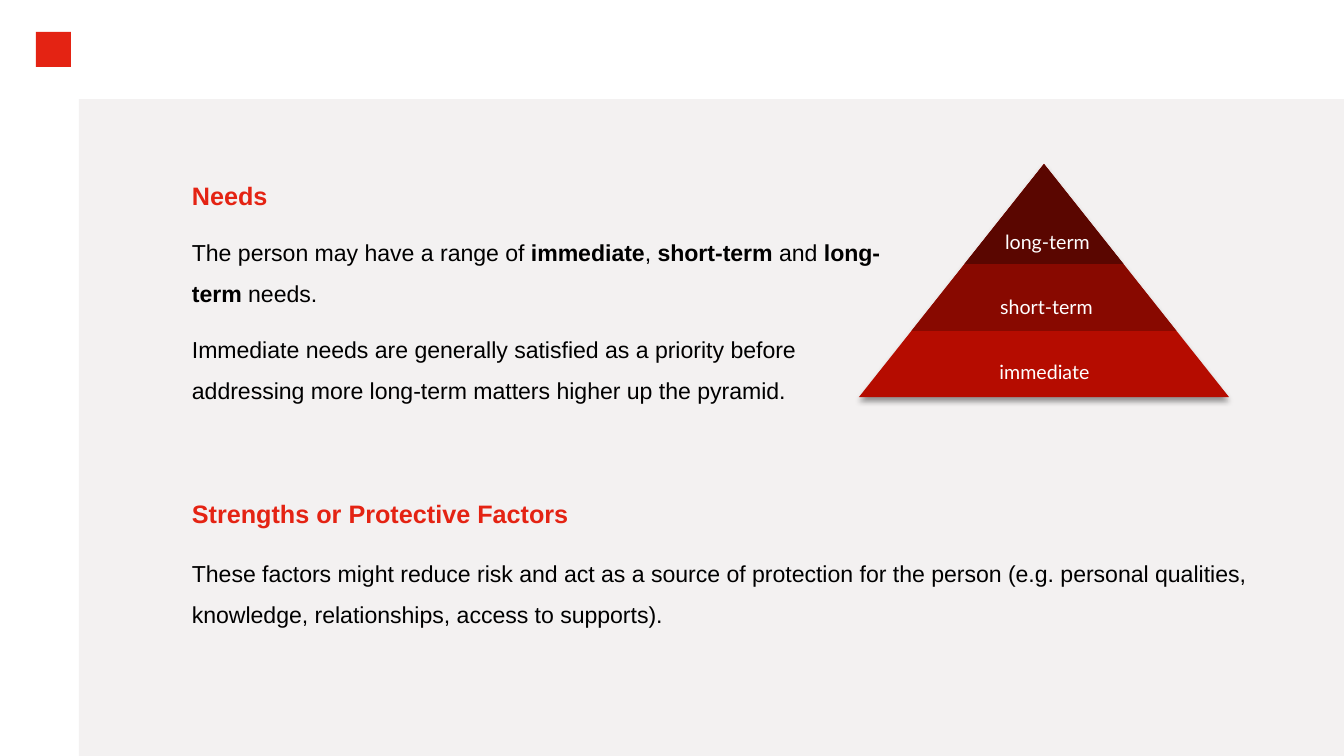
from dataclasses import dataclass

from lxml import etree
from pptx import Presentation
from pptx import util as u
from pptx.dml.color import RGBColor
from pptx.enum import shapes, text
from pptx.oxml.ns import qn

EMU_PER_PX = 12192000 / 1344


def px(length):
    return u.Emu(round(length * EMU_PER_PX))


@dataclass(frozen=True)
class Theme:
    red: str = "E42313"
    panel: str = "F3F1F1"
    black: str = "000000"
    white: str = "FFFFFF"
    tiers: tuple = ("B50C00", "880900", "5A0600")
    heading_size: float = 18
    body_size: float = 16.5
    label_size: float = 14
    body_font: str = "Arial"
    label_font: str = "Lato"


def add_run(paragraph, content, *, font, size, color, bold=False):
    run = paragraph.add_run()
    run.text = content
    run.font.name = font
    run.font.size = u.Pt(size)
    run.font.bold = bold
    run.font.color.rgb = RGBColor.from_string(color)


class SlideBuilder:
    def __init__(self, slide, theme):
        self.slide = slide
        self.theme = theme

    def add_shape(self, kind, left, top, width, height, fill):
        shape = self.slide.shapes.add_shape(kind, px(left), px(top), px(width), px(height))
        shape.shadow.inherit = False
        shape.fill.solid()
        shape.fill.fore_color.rgb = RGBColor.from_string(fill)
        shape.line.fill.background()
        return shape

    def add_drop_shadow(self, shape):
        effects = shape._element.spPr.find(qn("a:effectLst"))
        shadow = etree.SubElement(
            effects, qn("a:outerShdw"), blurRad=str(u.Pt(4)), dist=str(u.Pt(3)),
            dir="5400000", algn="ctr", rotWithShape="0")
        color = etree.SubElement(shadow, qn("a:srgbClr"), val=self.theme.black)
        etree.SubElement(color, qn("a:alpha"), val="40000")

    def add_text_frame(self, left, top, width, height):
        box = self.slide.shapes.add_textbox(px(left), px(top), px(width), px(height))
        box.text_frame.word_wrap = True
        return box.text_frame

    def add_section(self, left, top, width, height, heading, paragraphs, before=0, after=0):
        """Add a red heading over paragraphs, each a list of (text, bold) runs."""
        theme = self.theme
        frame = self.add_text_frame(left, top, width, height)
        paragraph = frame.paragraphs[0]
        paragraph.line_spacing = 1.5
        paragraph.space_after = u.Pt(after)
        add_run(paragraph, heading, font=theme.body_font, size=theme.heading_size,
                color=theme.red, bold=True)
        for runs in paragraphs:
            paragraph = frame.add_paragraph()
            paragraph.line_spacing = 1.5
            paragraph.space_before = u.Pt(before)
            paragraph.space_after = u.Pt(after)
            for content, bold in runs:
                add_run(paragraph, content, font=theme.body_font, size=theme.body_size,
                        color=theme.black, bold=bold)

    def add_label(self, left, top, width, height, content):
        theme = self.theme
        paragraph = self.add_text_frame(left, top, width, height).paragraphs[0]
        paragraph.alignment = text.PP_ALIGN.CENTER
        add_run(paragraph, content, font=theme.label_font, size=theme.label_size,
                color=theme.white)

    def add_pyramid(self, center, top, width, height, tiers):
        """Nest similar triangles under one apex; tiers are (height, label left, top, text)."""
        for index, (tier_height, *_) in enumerate(tiers):
            tier_width = round(width * tier_height / height)
            triangle = self.add_shape(
                shapes.MSO_SHAPE.ISOSCELES_TRIANGLE, center - tier_width / 2, top,
                tier_width, tier_height, self.theme.tiers[index])
            if index == 0:
                self.add_drop_shadow(triangle)
        for _, label_left, label_top, content in tiers:
            self.add_label(label_left, label_top, 179, 34, content)


def main():
    presentation = Presentation()
    presentation.slide_width = px(1344)
    presentation.slide_height = px(756)
    slide = presentation.slides.add_slide(presentation.slide_layouts[6])
    theme = Theme()
    builder = SlideBuilder(slide, theme)

    rectangle = shapes.MSO_SHAPE.RECTANGLE
    builder.add_shape(rectangle, 36, 32, 35, 35, theme.red)
    builder.add_shape(rectangle, 79, 99, 1265, 657, theme.panel)

    builder.add_section(182, 160, 727, 263, "Needs", [
        [("The person may have a range of ", False), ("immediate", True), (", ", False),
         ("short-term", True), (" and ", False), ("long-term ", True), ("needs.", False)],
        [("Immediate needs are generally satisfied as a priority before addressing "
          "more long-term matters higher up the pyramid.", False)],
    ], before=10)
    builder.add_section(182, 478, 1085, 152, "Strengths or Protective Factors", [
        [("These factors might reduce risk and act as a source of protection for the "
          "person (e.g. personal qualities, knowledge, relationships, access to "
          "supports).", False)],
    ], before=6, after=6)

    builder.add_pyramid(1044, 164, 370, 233, [
        (233, 955, 355, "immediate"),
        (167, 957, 290, "short-term"),
        (100, 958, 225, "long-term"),
    ])
    presentation.save("out.pptx")


if __name__ == "__main__":
    main()
